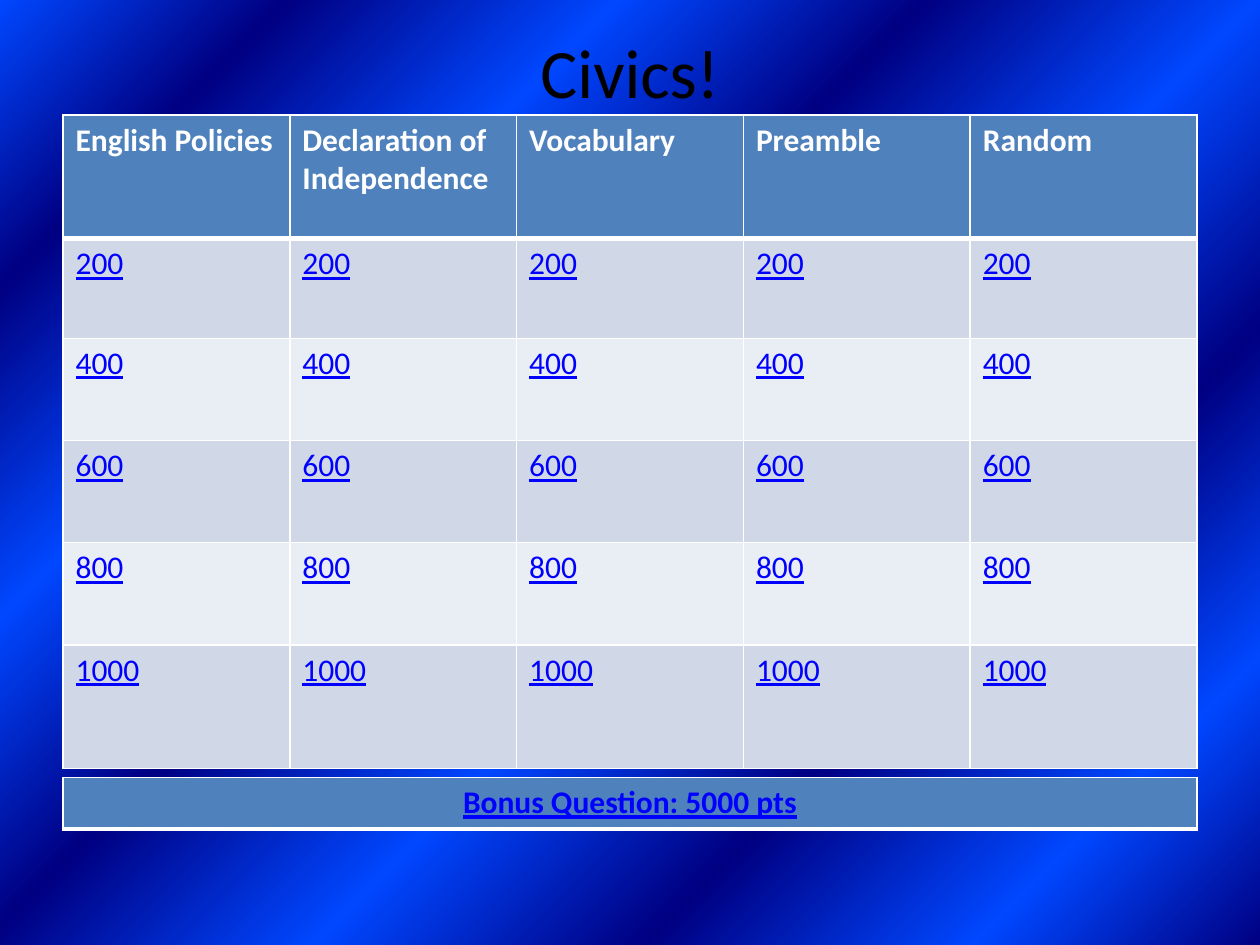
from dataclasses import dataclass

from lxml import etree
from pptx import Presentation
from pptx import util as u
from pptx.dml.color import RGBColor
from pptx.enum import text
from pptx.oxml import ns

BLACK = RGBColor(0x00, 0x00, 0x00)
WHITE = RGBColor(0xFF, 0xFF, 0xFF)
LINK = RGBColor(0x00, 0x00, 0xFF)
HEADER = RGBColor(0x4F, 0x81, 0xBD)
BAND_DARK = RGBColor(0xD0, 0xD8, 0xE8)
BAND_LIGHT = RGBColor(0xE9, 0xED, 0xF4)
NAVY = RGBColor(0x00, 0x00, 0x82)
BRIGHT = RGBColor(0x00, 0x47, 0xFF)

LEFT, WIDTH = u.Cm(1.27), u.Cm(22.86)
STOPS = (0, 13, 28, 42, 57, 72, 87, 100)
CATEGORIES = ("English Policies", "Declaration of Independence", "Vocabulary", "Preamble", "Random")
THIN, THICK = u.Pt(1), u.Pt(3)


@dataclass(frozen=True)
class Style:
    color: RGBColor
    size: float = 18
    bold: bool = False
    underline: bool = False
    align: text.PP_ALIGN = text.PP_ALIGN.LEFT


@dataclass(frozen=True)
class Row:
    labels: tuple[str, ...]
    height: float
    fill: RGBColor
    style: Style
    top_line: int = THIN
    bottom_line: int = THIN


def write(frame, words: str, style: Style) -> None:
    frame.text = words
    paragraph = frame.paragraphs[0]
    paragraph.alignment = style.align
    font = paragraph.runs[0].font
    font.name, font.size = "Calibri", u.Pt(style.size)
    font.bold, font.underline = style.bold, style.underline
    font.color.rgb = style.color


def add_border(cell, top_line: int, bottom_line: int) -> None:
    properties = cell._tc.get_or_add_tcPr()
    sides = {"a:lnL": THIN, "a:lnR": THIN, "a:lnT": top_line, "a:lnB": bottom_line}
    for position, (side, width) in enumerate(sides.items()):
        line = etree.Element(ns.qn(side), w=str(int(width)))
        solid = etree.SubElement(line, ns.qn("a:solidFill"))
        etree.SubElement(solid, ns.qn("a:srgbClr"), val=str(WHITE))
        properties.insert(position, line)


def add_board(slide, top: float, rows: list[Row]) -> None:
    columns = len(rows[0].labels)
    height = u.Cm(sum(row.height for row in rows))
    board = slide.shapes.add_table(len(rows), columns, LEFT, u.Cm(top), WIDTH, height).table
    for line, row in zip(board.rows, rows):
        line.height = u.Cm(row.height)
        for cell, label in zip(line.cells, row.labels):
            write(cell.text_frame, label, row.style)
            cell.fill.solid()
            cell.fill.fore_color.rgb = row.fill
            add_border(cell, row.top_line, row.bottom_line)


def paint_background(slide) -> None:
    fill = slide.background.fill
    fill.gradient()
    fill.gradient_angle = 315
    stops = next(slide._element.iter(ns.qn("a:gsLst")))
    for stop in list(stops):
        stops.remove(stop)
    for index, percent in enumerate(STOPS):
        stop = etree.SubElement(stops, ns.qn("a:gs"), pos=str(percent * 1000))
        color = NAVY if index % 2 else BRIGHT
        etree.SubElement(stop, ns.qn("a:srgbClr"), val=str(color))


def add_title(slide, words: str) -> None:
    frame = slide.shapes.add_textbox(LEFT, u.Cm(0.76), WIDTH, u.Cm(1.35)).text_frame
    frame.word_wrap = True
    frame.vertical_anchor = text.MSO_ANCHOR.MIDDLE
    write(frame, words, Style(BLACK, size=39.6, align=text.PP_ALIGN.CENTER))


def main() -> None:
    """Build the Civics quiz board."""
    deck = Presentation()
    deck.slide_width, deck.slide_height = u.Cm(25.4), u.Cm(19.05)
    slide = deck.slides.add_slide(deck.slide_layouts[6])
    paint_background(slide)
    add_title(slide, "Civics!")

    rows = [Row(CATEGORIES, 2.49, HEADER, Style(WHITE, bold=True), bottom_line=THICK)]
    for index, height in enumerate((2.01, 2.06, 2.06, 2.06, 2.49)):
        points = (str(200 * (index + 1)),) * len(CATEGORIES)
        band = BAND_LIGHT if index % 2 else BAND_DARK
        top_line = THIN if index else THICK
        rows.append(Row(points, height, band, Style(LINK, underline=True), top_line))
    add_board(slide, 2.32, rows)

    bonus = Style(LINK, bold=True, underline=True, align=text.PP_ALIGN.CENTER)
    add_board(slide, 15.67, [Row(("Bonus Question: 5000 pts",), 1.04, HEADER, bonus, bottom_line=THICK)])
    deck.save("out.pptx")


if __name__ == "__main__":
    main()
